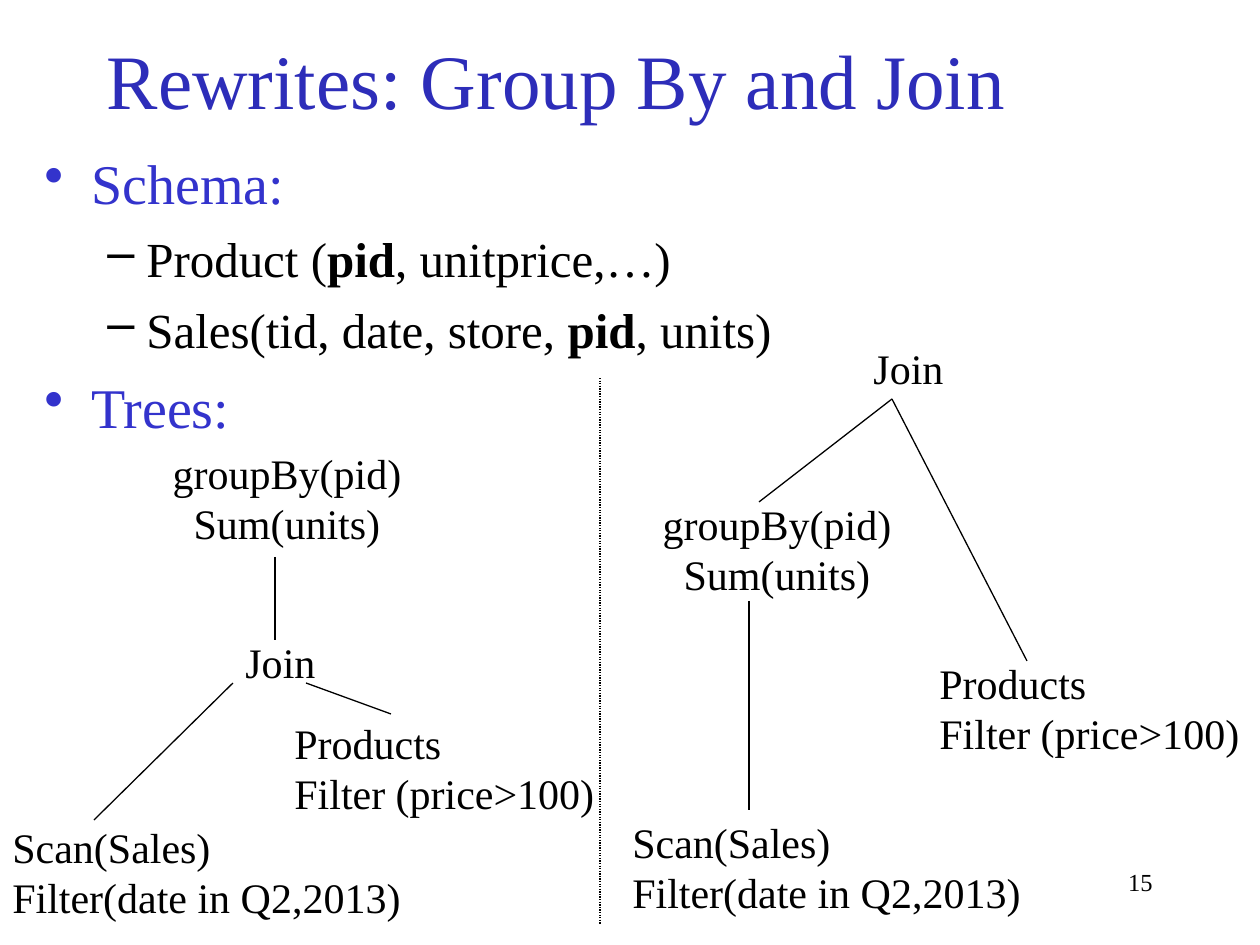
from dataclasses import dataclass

from lxml import etree
from pptx import Presentation
from pptx import util as u
from pptx.dml.color import RGBColor
from pptx.enum import dml, shapes, text
from pptx.oxml.ns import qn

PX_PER_INCH = 126


def px(length):
    return u.Emu(round(length * 914400 / PX_PER_INCH))


@dataclass(frozen=True)
class Theme:
    font: str = "Times New Roman"
    title_color: str = "2D2DB9"
    topic_color: str = "3333CC"
    ink: str = "000000"
    title_size: int = 44
    topic_size: int = 32
    detail_size: int = 28
    node_size: int = 24
    number_size: int = 14
    line_width: float = 0.75


class SlideBuilder:
    def __init__(self, slide, theme):
        self.slide = slide
        self.theme = theme

    def style(self, paragraph, size, color):
        paragraph.font.name = self.theme.font
        paragraph.font.size = u.Pt(size)
        paragraph.font.color.rgb = RGBColor.from_string(color)

    def frame(self, left, top, width, height, wrap=True):
        box = self.slide.shapes.add_textbox(*map(px, (left, top, width, height)))
        box.text_frame.word_wrap = wrap
        return box.text_frame

    def label(self, box, lines, size, color, align=text.PP_ALIGN.LEFT,
              anchor=text.MSO_ANCHOR.TOP, wrap=True):
        frame = self.frame(*box, wrap=wrap)
        frame.vertical_anchor = anchor
        frame.text = "\n".join(lines)
        for paragraph in frame.paragraphs:
            paragraph.alignment = align
            self.style(paragraph, size, color)
        return frame

    def node(self, box, lines, align=text.PP_ALIGN.LEFT, wrap=False):
        frame = self.label(box, lines, self.theme.node_size, self.theme.ink, align, wrap=wrap)
        frame.auto_size = text.MSO_AUTO_SIZE.SHAPE_TO_FIT_TEXT

    def outline(self, box, items):
        """Each item is (level, runs); every second run is bold."""
        theme = self.theme
        levels = [
            ("•", 47, 47, 8, theme.topic_size, theme.topic_color),
            ("–", 102, 39, 7, theme.detail_size, theme.ink),
        ]
        frame = self.frame(*box)
        frame.margin_top = px(13)
        for index, (level, runs) in enumerate(items):
            bullet, margin, hanging, gap, size, color = levels[level]
            paragraph = frame.paragraphs[0] if index == 0 else frame.add_paragraph()
            paragraph.level = level
            if index:
                paragraph.space_before = u.Pt(gap)
            properties = paragraph._p.get_or_add_pPr()
            properties.set("marL", str(px(margin)))
            properties.set("indent", str(-px(hanging)))
            etree.SubElement(properties, qn("a:buChar")).set("char", bullet)
            self.style(paragraph, size, color)
            for position, words in enumerate(runs):
                run = paragraph.add_run()
                run.text = words
                if position % 2:
                    run.font.bold = True

    def line(self, start, end, dash=None):
        edge = self.slide.shapes.add_connector(
            shapes.MSO_CONNECTOR.STRAIGHT, *map(px, (*start, *end)))
        edge.line.color.rgb = RGBColor.from_string(self.theme.ink)
        edge.line.width = u.Pt(self.theme.line_width)
        if dash:
            edge.line.dash_style = dash
        etree.SubElement(edge._element.spPr, qn("a:effectLst"))


def main():
    theme = Theme()
    deck = Presentation()
    deck.slide_width, deck.slide_height = u.Inches(10), u.Inches(7.5)
    page = SlideBuilder(deck.slides.add_slide(deck.slide_layouts[6]), theme)

    # Title and outline
    page.label((21, 0, 1071, 158), ["Rewrites: Group By and Join"], theme.title_size,
               theme.title_color, text.PP_ALIGN.CENTER, text.MSO_ANCHOR.MIDDLE)
    page.outline((32, 136, 1071, 567), [
        (0, ["Schema:"]),
        (1, ["Product (", "pid", ", unitprice,…)"]),
        (1, ["Sales(tid, date, store, ", "pid", ", units)"]),
        (0, ["Trees:"]),
    ])

    # Operators of both trees: left tree first, then the rewritten one
    trees = [
        {"join": (233, 630), "group": (160, 441), "scan": (0, 815), "products": (282, 711, 391)},
        {"join": (861, 336), "group": (650, 492), "scan": (620, 810), "products": (927, 651, 333)},
    ]
    for tree in trees:
        page.node((*tree["join"], 96, 63), ["Join"])
        page.node((*tree["group"], 254, 114), ["groupBy(pid)", "Sum(units)"],
                  text.PP_ALIGN.CENTER)
        page.node((*tree["scan"], 417, 114), ["Scan(Sales)", "Filter(date in Q2,2013)"])
        page.node((*tree["products"], 114), ["Products", "Filter (price>100)"], wrap=True)

    # Tree edges
    edges = [
        ((275, 557), (275, 640)),
        ((233, 683), (94, 820)),
        ((306, 683), (391, 714)),
        ((892, 399), (759, 502)),
        ((892, 399), (1027, 661)),
        ((749, 601), (749, 810)),
    ]
    for start, end in edges:
        page.line(start, end)

    # Divider between the trees
    page.line((600, 378), (600, 924), dml.MSO_LINE.ROUND_DOT)

    # Slide number
    page.label((903, 861, 262, 63), ["15"], theme.number_size, theme.ink,
               text.PP_ALIGN.RIGHT)

    deck.save("out.pptx")


if __name__ == "__main__":
    main()
